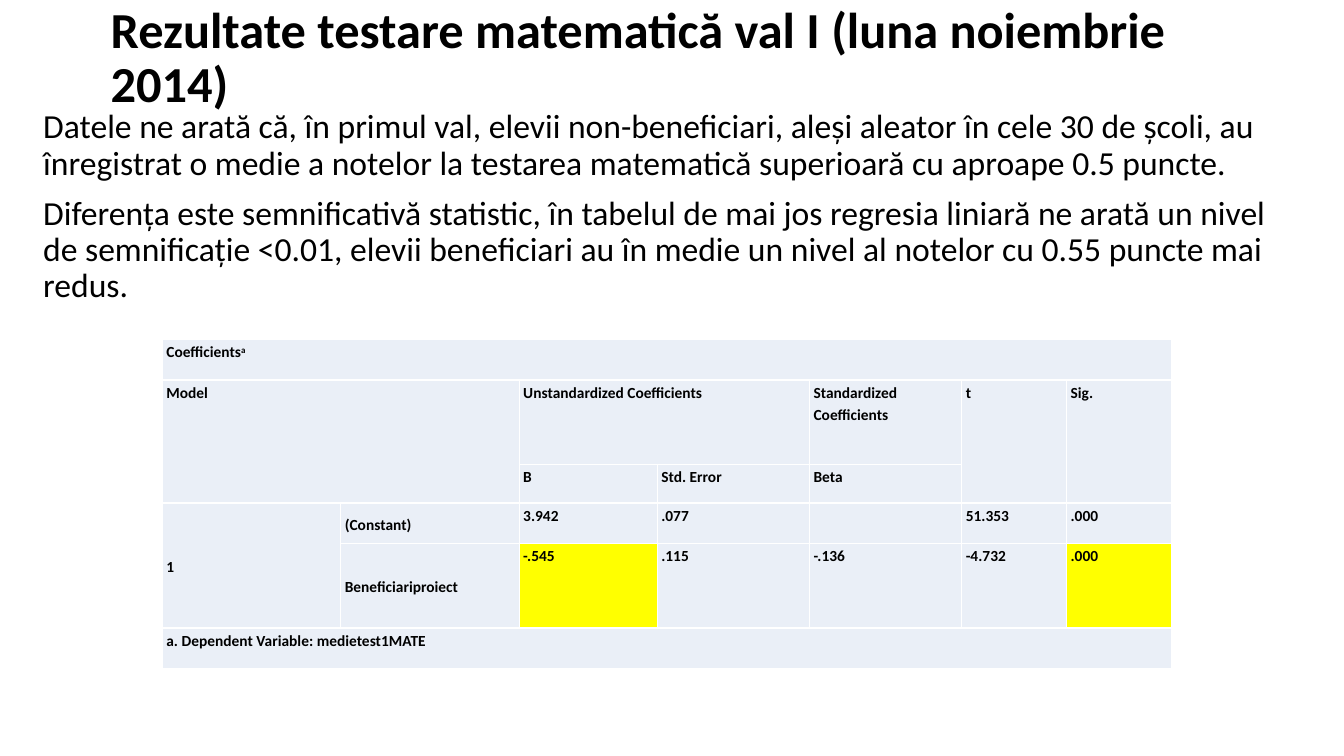
import pptx
import pptx.dml.color
import pptx.enum.text
import pptx.oxml
import pptx.oxml.ns
import pptx.util
from pptx.util import Inches, Pt

BLACK = pptx.dml.color.RGBColor(0x00, 0x00, 0x00)
PALE_BLUE = pptx.dml.color.RGBColor(0xEA, 0xEF, 0xF7)
YELLOW = pptx.dml.color.RGBColor(0xFF, 0xFF, 0x00)
BORDER_COLOR = "FFFFFF"
FONT = "Calibri"
MIDDLE = pptx.enum.text.MSO_ANCHOR.MIDDLE
TOP = pptx.enum.text.MSO_ANCHOR.TOP

TITLE = "Rezultate testare matematică val I (luna noiembrie 2014)"
BODY = [
    "Datele ne arată că, în primul val, elevii non-beneficiari, aleși aleator în cele 30 de școli, "
    "au înregistrat o medie a notelor la testarea matematică superioară cu aproape 0.5 puncte.",
    "Diferența este semnificativă statistic, în tabelul de mai jos regresia liniară ne arată un nivel "
    "de semnificație <0.01, elevii beneficiari au în medie un nivel al notelor cu 0.55 puncte mai redus.",
]
COLUMN_WIDTHS = [1.77, 1.77, 1.37, 1.51, 1.51, 1.04, 1.04]
ROW_HEIGHTS = [0.4, 0.84, 0.38, 0.4, 0.84, 0.4]
CELLS = [
    ["Coefficients", "", "", "", "", "", ""],
    ["Model", "", "Unstandardized Coefficients", "", "Standardized Coefficients", "t", "Sig."],
    ["", "", "B", "Std. Error", "Beta", "", ""],
    ["1", "(Constant)", "3.942", ".077", "", "51.353", ".000"],
    ["", "Beneficiariproiect", "-.545", ".115", "-.136", "-4.732", ".000"],
    ["a. Dependent Variable: medietest1MATE", "", "", "", "", "", ""],
]
MERGES = [
    ((0, 0), (0, 6)), ((1, 0), (2, 1)), ((1, 2), (1, 3)), ((1, 5), (2, 5)),
    ((1, 6), (2, 6)), ((3, 0), (4, 0)), ((5, 0), (5, 6)),
]
HIGHLIGHTS = {(4, 2), (4, 6)}
CENTERED = {(3, 0), (3, 1), (4, 1)}


def style_font(para, size, bold=False):
    """Set the font of a whole paragraph."""
    para.font.name = FONT
    para.font.size = Pt(size)
    para.font.bold = bold
    para.font.color.rgb = BLACK


def add_text(slide, box, lines, size, bold=False, anchor=TOP):
    """Place a wrapped text box holding one paragraph per line."""
    frame = slide.shapes.add_textbox(*map(Inches, box)).text_frame
    frame.word_wrap = True
    frame.vertical_anchor = anchor
    frame.text = "\n".join(lines)
    for index, para in enumerate(frame.paragraphs):
        para.line_spacing = 0.9
        para.space_before = Pt(10 if index else 0)
        style_font(para, size, bold)


def add_borders(cell):
    """Draw thin borders on all four sides of a cell."""
    properties = cell._tc.get_or_add_tcPr()
    for side in ("lnL", "lnR", "lnT", "lnB"):
        properties.append(pptx.oxml.parse_xml(
            f'<a:{side} {pptx.oxml.ns.nsdecls("a")} w="{Pt(1)}"><a:solidFill>'
            f'<a:srgbClr val="{BORDER_COLOR}"/></a:solidFill></a:{side}>'))


def style_cell(cell, text, fill, anchor):
    """Fill one cell and set its text, margins and borders."""
    cell.margin_left = cell.margin_right = cell.margin_top = cell.margin_bottom = 0
    cell.vertical_anchor = anchor
    add_borders(cell)
    cell.fill.solid()
    cell.fill.fore_color.rgb = fill
    cell.text = text
    para = cell.text_frame.paragraphs[0]
    para.alignment = pptx.enum.text.PP_ALIGN.JUSTIFY
    para.line_spacing = Pt(16)
    para._p.get_or_add_pPr().set("marL", str(Inches(0.04)))
    style_font(para, 11, True)


def add_coefficients(slide, box):
    """Place the regression table with merged headings."""
    table = slide.shapes.add_table(len(CELLS), len(COLUMN_WIDTHS), *map(Inches, box)).table
    for column, width in zip(table.columns, COLUMN_WIDTHS):
        column.width = Inches(width)
    for row, height in zip(table.rows, ROW_HEIGHTS):
        row.height = Inches(height)
    for row, texts in enumerate(CELLS):
        for column, text in enumerate(texts):
            place = (row, column)
            style_cell(table.cell(row, column), text,
                       YELLOW if place in HIGHLIGHTS else PALE_BLUE,
                       MIDDLE if place in CENTERED else TOP)
    for first, last in MERGES:
        table.cell(*first).merge(table.cell(*last))
    footnote_mark = table.cell(0, 0).text_frame.paragraphs[0].add_run()
    footnote_mark.text = "a"
    footnote_mark._r.get_or_add_rPr().set("baseline", "30000")


def main():
    """Build and save the slide."""
    deck = pptx.Presentation()
    deck.slide_width, deck.slide_height = Inches(13.33), Inches(7.5)
    slide = deck.slides.add_slide(deck.slide_layouts[6])
    add_text(slide, (1, 0.13, 11.5, 0.91), [TITLE], 36, True, MIDDLE)
    add_text(slide, (0.33, 1.04, 12.49, 5.83), BODY, 24)
    add_coefficients(slide, (1.61, 3.37, 10, 3.28))
    deck.save("out.pptx")


if __name__ == "__main__":
    main()
